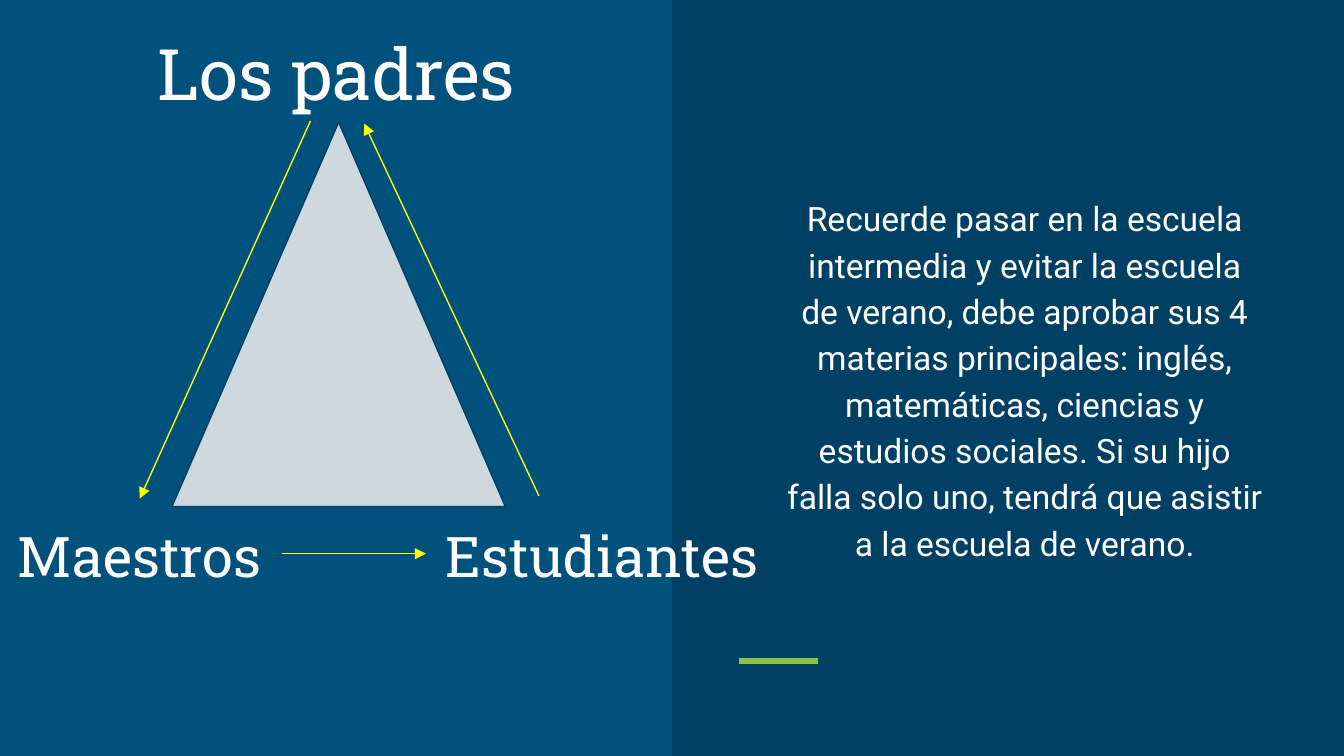
from lxml import etree
from pptx import Presentation
from pptx.dml.color import RGBColor
from pptx.enum.shapes import MSO_CONNECTOR, MSO_SHAPE
from pptx.enum.text import MSO_ANCHOR, PP_ALIGN
from pptx.oxml.ns import qn
from pptx.util import Inches, Pt

STRAIGHT = MSO_CONNECTOR.STRAIGHT
RECTANGLE = MSO_SHAPE.RECTANGLE
TRIANGLE = MSO_SHAPE.ISOSCELES_TRIANGLE
BOTTOM, MIDDLE = MSO_ANCHOR.BOTTOM, MSO_ANCHOR.MIDDLE
CENTER = PP_ALIGN.CENTER

BLUE = RGBColor(0x00, 0x51, 0x7C)
NAVY = RGBColor(0x00, 0x40, 0x65)
GREEN = RGBColor(0x8B, 0xC3, 0x4A)
GRAY = RGBColor(0xCF, 0xD8, 0xDC)
YELLOW = RGBColor(0xFF, 0xFF, 0x00)
WHITE = RGBColor(0xFF, 0xFF, 0xFF)

W = Inches(10)
H = W * 9 // 16
CELL = W // 100
prs = Presentation()
prs.slide_width, prs.slide_height = W, H
s = prs.slides.add_slide(prs.slide_layouts[6])
s.background.fill.solid()
s.background.fill.fore_color.rgb = BLUE


def grid(*cells):
    return [round(c * CELL) for c in cells]


def add_text(cells, text, font, size, anchor):
    tf = s.shapes.add_textbox(*grid(*cells)).text_frame
    tf.word_wrap = True
    tf.vertical_anchor = anchor
    tf.margin_left = tf.margin_right = tf.margin_top = tf.margin_bottom = CELL
    p = tf.paragraphs[0]
    p.text = text
    p.alignment = CENTER
    p.font.name, p.font.size, p.font.color.rgb = font, Pt(size), WHITE
    return p


panel = s.shapes.add_shape(RECTANGLE, W // 2, 0, W // 2, H)
panel.line.fill.background()

lines = (
    ((55, 49.2, 60.9, 49.2), GREEN, 3, False),
    ((23.1, 9, 10.4, 37.1), YELLOW, 0.75, True),
    ((40.1, 36.9, 27.1, 9.2), YELLOW, 0.75, True),
    ((21, 41.2, 31.7, 41.2), YELLOW, 0.75, True),
)

add_text((6.3, 6.2, 37.5, 3.3), "Los padres", "Roboto Slab", 38, BOTTOM)
p = add_text(
    (57.5, 7.9, 37.5, 40.4),
    "Recuerde pasar en la escuela intermedia y evitar la escuela de verano, "
    "debe aprobar sus 4 materias principales: inglés, matemáticas, ciencias y "
    "estudios sociales. Si su hijo falla solo uno, tendrá que asistir a la "
    "escuela de verano.",
    "Roboto", 18, MIDDLE,
)
p.line_spacing = 1.15
p.space_after = Pt(16)
add_text((-2.4, 37.1, 25.6, 7.7), "Maestros", "Roboto Slab", 30, BOTTOM)
add_text((29.4, 37.1, 30.8, 7.7), "Estudiantes", "Roboto Slab", 30, BOTTOM)

triangle = s.shapes.add_shape(TRIANGLE, *grid(12.8, 9.1, 24.8, 28.6))
triangle.line.color.rgb = NAVY
triangle.line.width = Pt(0.75)
for sp, color in ((panel, NAVY), (triangle, GRAY)):
    sp.shadow.inherit = False
    sp.fill.solid()
    sp.fill.fore_color.rgb = color

for ends, color, width, arrow in lines:
    line = s.shapes.add_connector(STRAIGHT, *grid(*ends))
    line.line.color.rgb = color
    line.line.width = Pt(width)
    sp_pr = line._element.spPr
    if arrow:
        etree.SubElement(sp_pr.find(qn("a:ln")), qn("a:tailEnd"), type="triangle")
    etree.SubElement(sp_pr, qn("a:effectLst"))

prs.save("out.pptx")
